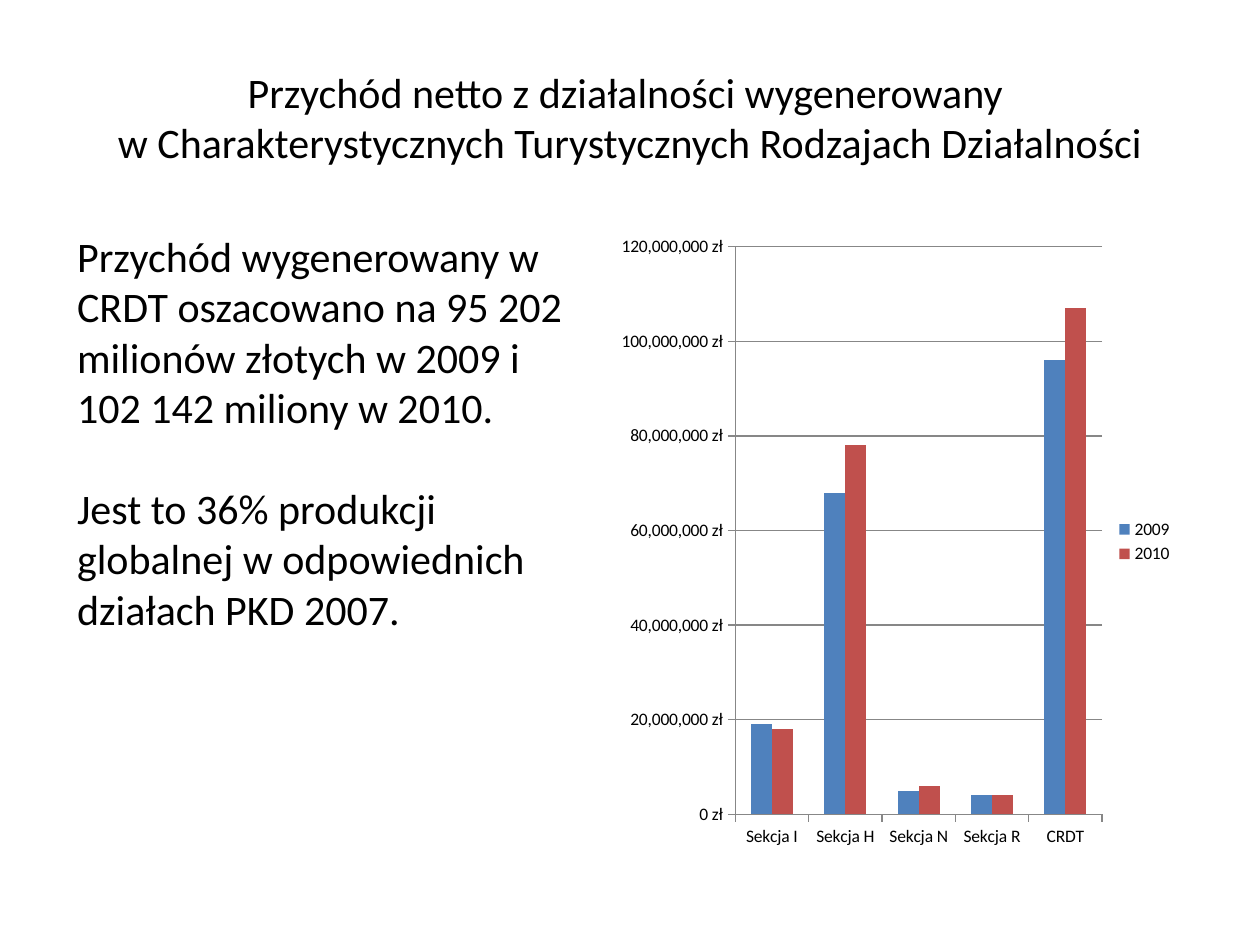
from dataclasses import dataclass

from lxml.etree import SubElement
from pptx import Presentation
from pptx.chart.data import CategoryChartData
from pptx.dml.color import RGBColor
from pptx.enum.chart import XL_CHART_TYPE, XL_LEGEND_POSITION, XL_TICK_MARK
from pptx.enum.text import MSO_ANCHOR, MSO_AUTO_SIZE, PP_ALIGN
from pptx.oxml.ns import qn
from pptx.util import Cm, Pt

FONT = "Calibri"
COLORS = {"text": "000000", "first": "4F81BD", "second": "C0504D", "grid": "878787"}


@dataclass
class Box:
    left: float
    top: float
    width: float
    height: float

    def lengths(self) -> list:
        return [Cm(n) for n in (self.left, self.top, self.width, self.height)]


@dataclass
class Series:
    name: str
    color: str
    values: list


SERIES = [
    Series("2009", "first", [19e6, 68e6, 5e6, 4e6, 96e6]),
    Series("2010", "second", [18e6, 78e6, 6e6, 4e6, 107e6]),
]
SECTIONS = ["Sekcja I", "Sekcja H", "Sekcja N", "Sekcja R", "CRDT"]


def tint(name: str) -> RGBColor:
    return RGBColor.from_string(COLORS[name])


def style(font, size: float) -> None:
    font.name = FONT
    font.size = Pt(size)
    font.color.rgb = tint("text")


def write(shape, text: str, box: Box, *, size=24, align=PP_ALIGN.LEFT,
          anchor=MSO_ANCHOR.TOP, gap=0) -> None:
    """Fill a placeholder, one paragraph per line; gap parts paragraphs."""
    shape.left, shape.top, shape.width, shape.height = box.lengths()
    frame = shape.text_frame
    frame.text = text
    frame.word_wrap = True
    frame.auto_size = MSO_AUTO_SIZE.NONE
    frame.vertical_anchor = anchor
    for i, para in enumerate(frame.paragraphs):
        para.alignment = align
        if i:
            para.space_before = Pt(gap)
        # No bullet, no indent
        props = para._p.get_or_add_pPr()
        props.set("marL", "0")
        props.set("indent", "0")
        SubElement(props, qn("a:buNone"))
        for run in para.runs:
            style(run.font, size)


def plot(slide, box: Box) -> None:
    data = CategoryChartData()
    data.categories = SECTIONS
    for item in SERIES:
        data.add_series(item.name, item.values)
    chart = slide.shapes.add_chart(
        XL_CHART_TYPE.COLUMN_CLUSTERED, *box.lengths(), data).chart
    style(chart.font, 10)
    chart.has_title = False
    chart.has_legend = True
    chart.legend.position = XL_LEGEND_POSITION.RIGHT
    chart.legend.include_in_layout = False

    # Columns
    bars = chart.plots[0]
    bars.gap_width = 150
    bars.overlap = 0
    bars.vary_by_categories = False
    for part, item in zip(bars.series, SERIES):
        part.format.fill.solid()
        part.format.fill.fore_color.rgb = tint(item.color)

    # Axes
    value = chart.value_axis
    value.minimum_scale, value.maximum_scale, value.major_unit = 0, 120e6, 20e6
    value.has_major_gridlines = True
    value.tick_labels.number_format = '#,##0\\ "zł"'
    value.tick_labels.number_format_is_linked = False
    for axis in (value, chart.category_axis):
        axis.major_tick_mark = XL_TICK_MARK.OUTSIDE
    for line in (value.format.line, chart.category_axis.format.line,
                 value.major_gridlines.format.line):
        line.color.rgb = tint("grid")
        line.width = Pt(0.75)


def main() -> None:
    deck = Presentation()
    deck.slide_width, deck.slide_height = Cm(25.4), Cm(19.05)
    slide = deck.slides.add_slide(deck.slide_layouts[1])

    # Title and body
    write(slide.shapes.title,
          "Przychód netto z działalności wygenerowany \v"
          "w Charakterystycznych Turystycznych Rodzajach Działalności",
          Box(1.27, 0.76, 22.86, 3.18),
          align=PP_ALIGN.CENTER, anchor=MSO_ANCHOR.MIDDLE)
    write(slide.placeholders[1],
          "Przychód wygenerowany w CRDT oszacowano na 95 202 milionów "
          "złotych w 2009 i 102 142 miliony w 2010.\n"
          "Jest to 36% produkcji globalnej w odpowiednich działach PKD 2007.",
          Box(1.3, 4.52, 10.6, 12.57), gap=28.8)

    # Chart
    plot(slide, Box(12.3, 4.52, 11.6, 12.8))
    deck.save("out.pptx")


if __name__ == "__main__":
    main()
